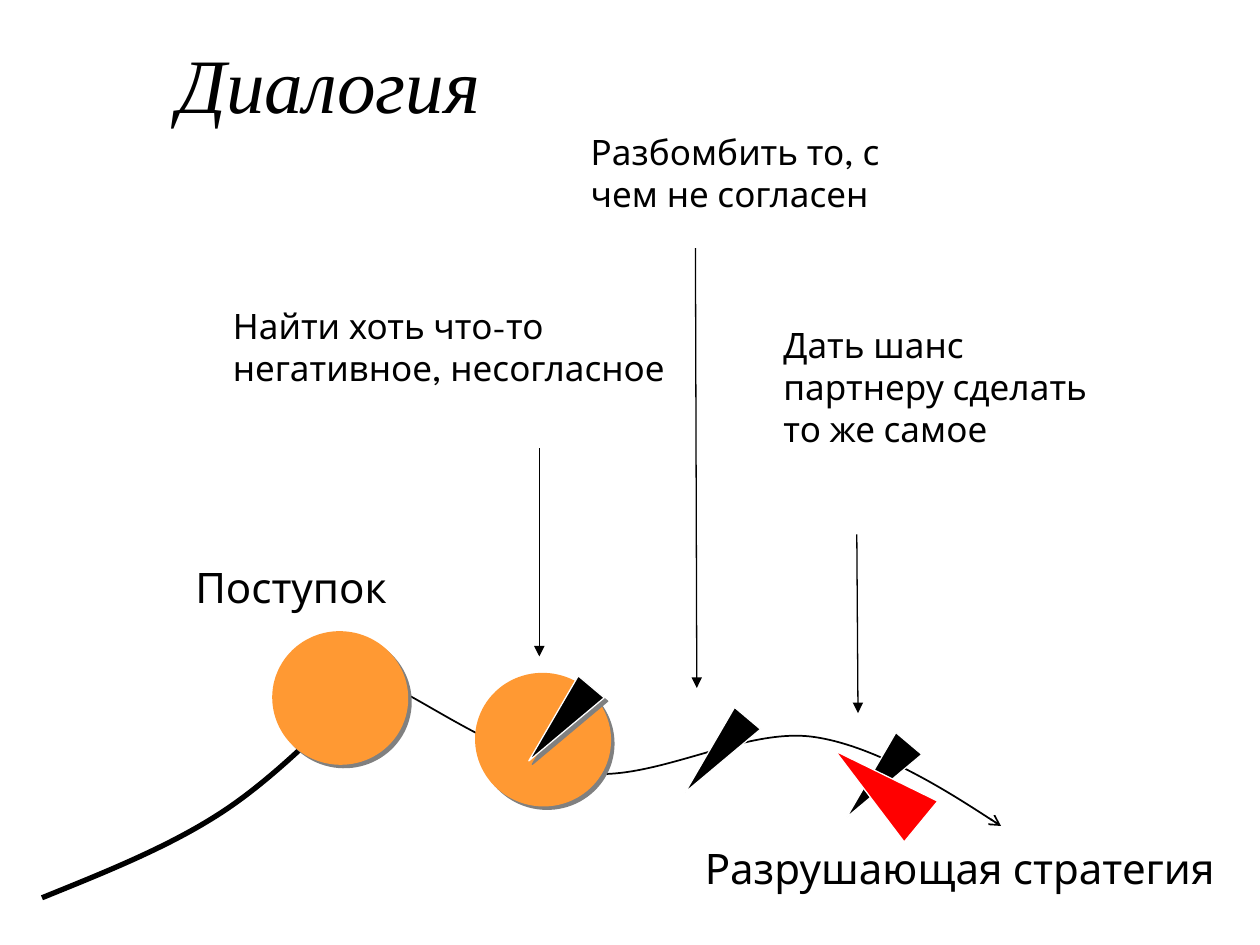
from pptx import Presentation
from pptx.dml.color import RGBColor
from pptx.enum.shapes import MSO_CONNECTOR, MSO_SHAPE
from pptx.enum.text import MSO_AUTO_SIZE, PP_ALIGN
from pptx.oxml import parse_xml
from pptx.oxml.ns import nsdecls, qn
from pptx.util import Pt
from lxml.etree import SubElement

BLACK = RGBColor(0, 0, 0)
WHITE = RGBColor(255, 255, 255)
ORANGE = RGBColor(255, 153, 51)
RED = RGBColor(255, 0, 0)
GRAY = RGBColor(128, 128, 128)

BODY_FONT = "League Spartan"
TITLE_FONT = "Times New Roman"

STRATEGY_CURVE = [
    (194.4, 398.2),
    (205.9, 397.2), (217.4, 396.2), (229, 395.3),
    (246.2, 403.2), (296.6, 437.8), (335.5, 442.1),
    (375.1, 446.4), (424.8, 416.2), (463.7, 421.2),
    (503.3, 426.2), (571.7, 472.3), (571.7, 472.3),
]
ACTION_CURVE = [
    (23.8, 513.4),
    (61.2, 498.2), (98.6, 483.1), (129.6, 461.5),
    (161.3, 440.6), (213.1, 386.6), (213.1, 386.6),
]


def add_label(page, left, top, width, height, text, size,
              font=BODY_FONT, align=PP_ALIGN.LEFT, italic=False):
    box = page.shapes.add_textbox(Pt(left), Pt(top), Pt(width), Pt(height))
    frame = box.text_frame
    frame.word_wrap = True
    frame.auto_size = MSO_AUTO_SIZE.SHAPE_TO_FIT_TEXT
    para = frame.paragraphs[0]
    para.alignment = align
    span = para.add_run()
    span.text = text
    span.font.name = font
    span.font.size = Pt(size)
    span.font.italic = italic
    span.font.color.rgb = BLACK


def style_line(shape, width, arrowhead):
    shape.line.color.rgb = BLACK
    shape.line.width = Pt(width)
    SubElement(shape.line._get_or_add_ln(), qn("a:tailEnd"), type=arrowhead)


def add_arrow(page, start, end):
    arrow = page.shapes.add_connector(
        MSO_CONNECTOR.STRAIGHT, *(Pt(value) for value in start + end))
    style_line(arrow, 0.75, "triangle")
    SubElement(arrow._element.spPr, qn("a:effectLst"))


def add_curve(page, points, width, arrowhead):
    builder = page.shapes.build_freeform(*points[0], scale=Pt(1))
    builder.add_line_segments(points[1:], close=False)
    curve = builder.convert_to_shape()
    curve.shadow.inherit = False
    curve.fill.background()
    style_line(curve, width, arrowhead)
    segments = list(curve._element.iter(qn("a:lnTo")))
    for index in range(0, len(segments), 3):
        outline = segments[index].getparent()
        bezier = SubElement(outline, qn("a:cubicBezTo"))
        for segment in segments[index:index + 3]:
            bezier.append(segment[0])
            outline.remove(segment)


def add_figure(page, kind, left, top, width, height, rotation, color,
               outlined=True, shadowed=False):
    figure = page.shapes.add_shape(
        kind, Pt(left), Pt(top), Pt(width), Pt(height))
    figure.rotation = rotation
    figure.fill.solid()
    figure.fill.fore_color.rgb = color
    if outlined:
        figure.line.color.rgb = WHITE
        figure.line.width = Pt(0.75)
    else:
        figure.line.fill.background()
    figure.shadow.inherit = False
    if shadowed:
        effects = figure._element.spPr.find(qn("a:effectLst"))
        effects.append(parse_xml(
            f'<a:outerShdw {nsdecls("a")} dist="{Pt(2.8)}" dir="2700000" '
            f'algn="ctr" rotWithShape="0"><a:srgbClr val="{GRAY}"/>'
            '</a:outerShdw>'))


def add_circle(page, left, top):
    add_figure(page, MSO_SHAPE.OVAL, left, top, 77.8, 76.3, 12.3, ORANGE,
               outlined=False, shadowed=True)


def add_wedge(page, left, top, shadowed=False):
    add_figure(page, MSO_SHAPE.ISOSCELES_TRIANGLE, left, top, 19.4, 55.4,
               220.1, BLACK, shadowed=shadowed)


def main():
    deck = Presentation()
    deck.slide_width = Pt(720)
    deck.slide_height = Pt(540)
    page = deck.slides.add_slide(deck.slide_layouts[6])

    add_curve(page, STRATEGY_CURVE, 1, "arrow")
    add_curve(page, ACTION_CURVE, 3, "triangle")
    add_circle(page, 155.5, 360.7)
    add_label(page, 262, 478, 445, 36, "Разрушающая стратегия ", 24,
              align=PP_ALIGN.RIGHT)
    add_label(page, 104.5, 317.5, 271.5, 36, "Поступок", 24)

    add_arrow(page, (308.2, 256.3), (308.2, 375.1))
    add_label(page, 126, 170.6, 271.5, 80,
              "Найти хоть что-то негативное, несогласное", 20)
    add_circle(page, 271.4, 384.5)
    add_wedge(page, 310.3, 385.9, shadowed=True)

    add_arrow(page, (397.4, 141.8), (398.2, 393.1))
    add_label(page, 330.5, 71.3, 192.2, 55.4,
              "Разбомбить то, с чем не согласен", 20)
    add_wedge(page, 399.6, 403.9)

    add_arrow(page, (489.6, 305.3), (490.3, 407.5))
    add_label(page, 440.6, 181.4, 192.2, 104.4,
              "Дать шанс партнеру сделать то же самое", 20)
    add_wedge(page, 491.8, 418.3)
    add_figure(page, MSO_SHAPE.ISOSCELES_TRIANGLE, 486.7, 417.6, 30.2, 63.4,
               309.5, RED)

    add_label(page, 5, 17.3, 365.8, 60.5, "Диалогия", 44, font=TITLE_FONT,
              align=PP_ALIGN.CENTER, italic=True)
    deck.save("out.pptx")


if __name__ == "__main__":
    main()
